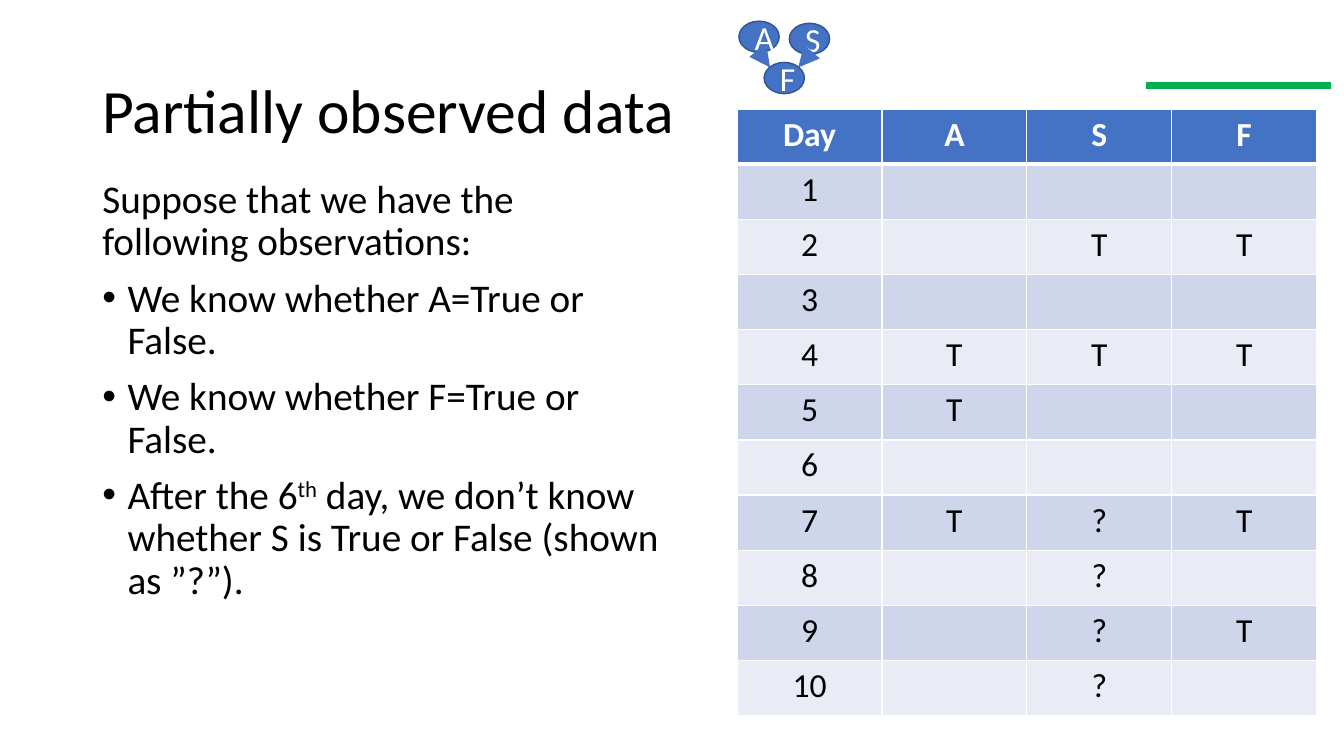
"""Build a slide showing partially observed data for a small Bayesian network."""
from lxml.etree import SubElement
from pptx import Presentation
from pptx.dml.color import RGBColor
from pptx.enum.shapes import MSO_CONNECTOR as Connector, MSO_SHAPE as Shape
from pptx.enum.text import MSO_ANCHOR as Anchor, PP_ALIGN as Align
from pptx.oxml.ns import qn
from pptx.util import Pt

BLACK = RGBColor(0x00, 0x00, 0x00)
WHITE = RGBColor(0xFF, 0xFF, 0xFF)
BLUE = RGBColor(0x44, 0x72, 0xC4)
NAVY = RGBColor(0x32, 0x54, 0x91)
GREEN = RGBColor(0x00, 0xB0, 0x50)
BANDS = (RGBColor(0xE9, 0xEB, 0xF5), RGBColor(0xCF, 0xD5, 0xEA))

HEADINGS = ("Day", "A", "S", "F")
OBSERVATIONS = (
    ("", "", ""),
    ("", "T", "T"),
    ("", "", ""),
    ("T", "T", "T"),
    ("T", "", ""),
    ("", "", ""),
    ("T", "?", "T"),
    ("", "?", ""),
    ("", "?", "T"),
    ("", "?", ""),
)
NODES = (("A", 527.8, 15.1), ("S", 563.8, 16.6), ("F", 545.8, 44.6))
EDGES = ((542.2, 37.4, 550.1, 48.2), (578.2, 38.9, 570.2, 48.2))


def write(para, text, font="Calibri", size=24, color=BLACK, bold=False,
          align=None, spacing=None, before=None, baseline=None):
    """Add a formatted span of text to a paragraph."""
    if align is not None:
        para.alignment = align
    if spacing is not None:
        para.line_spacing = spacing
    if before is not None:
        para.space_before = Pt(before)
    span = para.add_run()
    span.text = text
    span.font.name = font
    span.font.size = Pt(size)
    span.font.bold = bold
    span.font.color.rgb = color
    if baseline:
        span._r.get_or_add_rPr().set("baseline", str(baseline * 1000))


class SlideBuilder:
    """Hold the style and the current slide."""

    def __init__(self, page, line_spacing=0.9):
        self.shapes = page.shapes
        self.line_spacing = line_spacing

    def text_box(self, left, top, width, height, anchor=Anchor.TOP):
        """Add a wrapping text box and return its frame."""
        box = self.shapes.add_textbox(Pt(left), Pt(top), Pt(width), Pt(height))
        box.text_frame.word_wrap = True
        box.text_frame.vertical_anchor = anchor
        return box.text_frame

    def title(self, text):
        """Add the slide title."""
        frame = self.text_box(66, 28.8, 828, 104.4, Anchor.MIDDLE)
        write(frame.paragraphs[0], text, size=44, spacing=self.line_spacing)

    def body(self, intro, bullets):
        """Add an introduction followed by bullets made of (text, baseline) spans."""
        frame = self.text_box(66, 124.6, 414, 387.4)
        style = {"size": 28, "spacing": self.line_spacing, "before": 10}
        write(frame.paragraphs[0], intro, **style)
        for spans in bullets:
            para = frame.add_paragraph()
            for text, baseline in spans:
                write(para, text, baseline=baseline, **style)
            properties = para._p.get_or_add_pPr()
            properties.set("marL", str(Pt(18)))
            properties.set("indent", str(Pt(-18)))
            SubElement(properties, qn("a:buFont"), typeface="Arial")
            SubElement(properties, qn("a:buChar"), char="•")

    def line(self, x1, y1, x2, y2, color, arrow=False):
        """Add a thick straight line, with an arrowhead at its end if wanted."""
        line = self.shapes.add_connector(
            Connector.STRAIGHT, Pt(x1), Pt(y1), Pt(x2), Pt(y2))
        line.line.color.rgb = color
        line.line.width = Pt(5)
        if arrow:
            SubElement(line.line._get_or_add_ln(), qn("a:tailEnd"), type="triangle")
        SubElement(line._element.spPr, qn("a:effectLst"))

    def node(self, text, left, top):
        """Add a lettered ellipse."""
        node = self.shapes.add_shape(
            Shape.OVAL, Pt(left), Pt(top), Pt(28.8), Pt(22.3))
        node.shadow.inherit = False
        node.fill.solid()
        node.fill.fore_color.rgb = BLUE
        node.line.color.rgb = NAVY
        node.line.width = Pt(1)
        node.text_frame.word_wrap = True
        node.text_frame.vertical_anchor = Anchor.MIDDLE
        write(node.text_frame.paragraphs[0], text, color=WHITE, align=Align.CENTER)

    def cell(self, cell, text, fill, top=1, bottom=1, **style):
        """Fill one table cell and draw its white borders."""
        properties = cell._tc.get_or_add_tcPr()
        for side, width in (("L", 1), ("R", 1), ("T", top), ("B", bottom)):
            border = SubElement(properties, qn(f"a:ln{side}"), w=str(Pt(width)))
            paint = SubElement(border, qn("a:solidFill"))
            SubElement(paint, qn("a:srgbClr"), val=str(WHITE))
        cell.fill.solid()
        cell.fill.fore_color.rgb = fill
        if text:
            write(cell.text_frame.paragraphs[0], text, align=Align.CENTER, **style)

    def table(self, headings, rows):
        """Add the banded table of daily observations."""
        table = self.shapes.add_table(
            len(rows) + 1, len(headings),
            Pt(526.5), Pt(78), Pt(414), Pt(433.4)).table
        table.horz_banding = False
        for column, heading in enumerate(headings):
            self.cell(table.cell(0, column), heading, BLUE, bottom=3,
                      color=WHITE, bold=True)
        for day, values in enumerate(rows, 1):
            for column, value in enumerate((str(day), *values)):
                self.cell(table.cell(day, column), value, BANDS[day % 2],
                          top=3 if day == 1 else 1)


def main():
    """Create and save the deck."""
    deck = Presentation()
    deck.slide_width, deck.slide_height = Pt(960), Pt(540)
    page = deck.slides.add_slide(deck.slide_layouts[6])
    builder = SlideBuilder(page)
    builder.title("Partially observed data")
    builder.body("Suppose that we have the following observations:", (
        (("We know whether A=True or False.", None),),
        (("We know whether F=True or False.", None),),
        (("After the 6", None), ("th", 30),
         (" day, we don’t know whether S is True or False (shown as ”?”).", None)),
    ))
    builder.line(818.6, 61.2, 951.1, 61.2, GREEN)
    builder.table(HEADINGS, OBSERVATIONS)
    for node in NODES:
        builder.node(*node)
    for edge in EDGES:
        builder.line(*edge, BLUE, arrow=True)
    deck.save("out.pptx")


if __name__ == "__main__":
    main()
